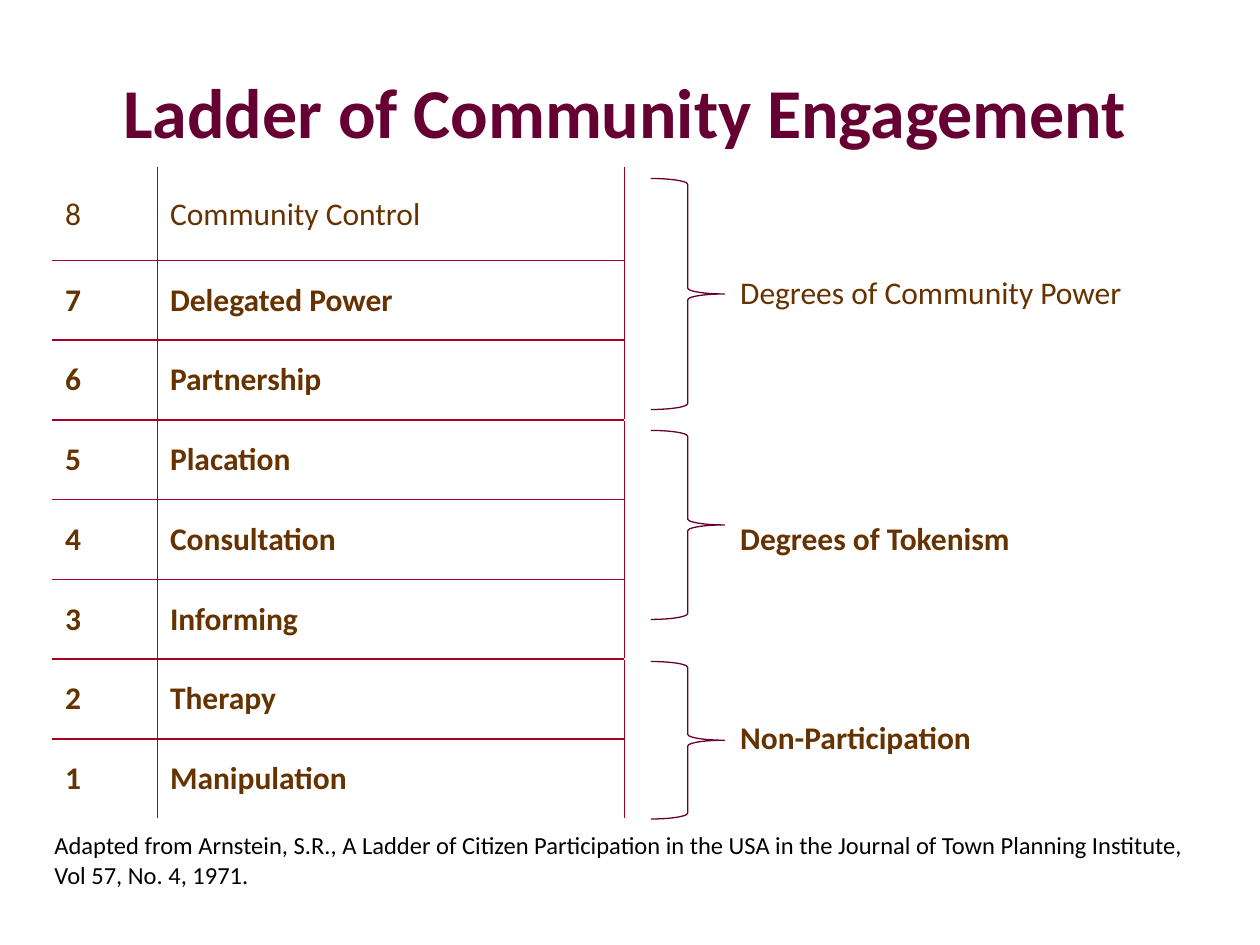
from typing import NamedTuple

from lxml.etree import SubElement
from pptx import Presentation
from pptx.dml.color import RGBColor
from pptx.enum.shapes import MSO_SHAPE
from pptx.enum.text import MSO_ANCHOR, PP_ALIGN
from pptx.oxml.ns import qn
from pptx.util import Inches, Pt

PLUM = RGBColor(0x66, 0x00, 0x33)
BROWN = RGBColor(0x66, 0x33, 0x00)
RED = RGBColor(0xA5, 0x00, 0x21)
WHITE = RGBColor(0xFF, 0xFF, 0xFF)
BLACK = RGBColor(0x00, 0x00, 0x00)

UNIT = Inches(10) / 120
COLS = (10, 44.5, 9.8, 44.7)
ROWS = (8.8,) + (7.6,) * 7
RUNGS = ("Community Control", "Delegated Power", "Partnership", "Placation",
         "Consultation", "Informing", "Therapy", "Manipulation")


class Group(NamedTuple):
    """Rungs that share one degree, and the brace beside them."""
    name: str
    first: int
    last: int
    top: float
    tall: float
    bold: bool = True


GROUPS = (
    Group("Degrees of Community Power", 0, 2, 17, 22, False),
    Group("Degrees of Tokenism", 3, 5, 41, 18),
    Group("Non-Participation", 6, 7, 63, 15),
)


def grid(*spans: float) -> list[int]:
    """Turn grid units into slide lengths."""
    return [round(span * UNIT) for span in spans]


def write(frame, text: str, *, size: float = 18, color: RGBColor = BROWN,
          bold: bool = False, align=PP_ALIGN.LEFT, after: float = 0) -> None:
    """Put one formatted paragraph into a text frame."""
    frame.word_wrap = True
    para = frame.paragraphs[0]
    para.alignment = align
    para.space_after = Pt(after)
    run = para.add_run()
    run.text = text
    font = run.font
    font.name, font.size, font.bold = "Calibri", Pt(size), bold
    font.color.rgb = color


def edge(cell, left: RGBColor, right: RGBColor, top: RGBColor,
         base: RGBColor) -> None:
    """Give a clear cell its four border colours."""
    props = cell._tc.get_or_add_tcPr()
    for side, color in zip("LRTB", (left, right, top, base)):
        line = SubElement(props, qn(f"a:ln{side}"), w=str(Pt(1)))
        fill = SubElement(line, qn("a:solidFill"))
        SubElement(fill, qn("a:srgbClr"), val=str(color))
    cell.fill.background()
    cell.vertical_anchor = MSO_ANCHOR.MIDDLE


def ladder(slide) -> None:
    """Draw the table of rungs with their degrees."""
    place = grid(5, 16, sum(COLS), sum(ROWS))
    table = slide.shapes.add_table(len(ROWS), len(COLS), *place).table
    table.first_row = table.horz_banding = False
    for col, width in zip(table.columns, grid(*COLS)):
        col.width = width
    for row, height in zip(table.rows, grid(*ROWS)):
        row.height = height
    end = len(RUNGS) - 1
    for row, rung in enumerate(RUNGS):
        top = WHITE if row == 0 else RED
        base = WHITE if row == end else RED
        for col, text in enumerate((str(end + 1 - row), rung)):
            cell = table.cell(row, col)
            edge(cell, RED if col else WHITE, RED, top, base)
            write(cell.text_frame, text, bold=row > 0)
        edge(table.cell(row, 2), RED, WHITE, WHITE, WHITE)
        edge(table.cell(row, 3), WHITE, WHITE, WHITE, WHITE)
    for group in GROUPS:
        for col in (2, 3):
            table.cell(group.first, col).merge(table.cell(group.last, col))
        write(table.cell(group.first, 3).text_frame, group.name,
              bold=group.bold)


def brace(slide, group: Group) -> None:
    """Draw the brace that gathers a group of rungs."""
    shape = slide.shapes.add_shape(
        MSO_SHAPE.RIGHT_BRACE, *grid(62, group.top, 7, group.tall))
    shape.adjustments[0] = 0.08
    shape.shadow.inherit = False
    shape.fill.background()
    shape.line.color.rgb = PLUM
    shape.line.width = Pt(0.75)


def label(slide, text: str, top: float, tall: float, anchor, **style) -> None:
    """Add a text box across the slide."""
    frame = slide.shapes.add_textbox(*grid(4, top, 111, tall)).text_frame
    frame.vertical_anchor = anchor
    write(frame, text, **style)


def main() -> None:
    """Build and save the slide."""
    deck = Presentation()
    deck.slide_width, deck.slide_height = grid(120, 90)
    slide = deck.slides.add_slide(deck.slide_layouts[6])
    label(slide, "Ladder of Community Engagement", 6, 9, MSO_ANCHOR.MIDDLE,
          size=40, color=PLUM, bold=True, align=PP_ALIGN.CENTER)
    ladder(slide)
    for group in GROUPS:
        brace(slide, group)
    label(slide, "Adapted from Arnstein, S.R., A Ladder of Citizen "
          "Participation in the USA in the Journal of Town Planning "
          "Institute, Vol 57, No. 4, 1971.", 78.5, 6.8, MSO_ANCHOR.TOP,
          size=14, color=BLACK)
    deck.save("out.pptx")


if __name__ == "__main__":
    main()
